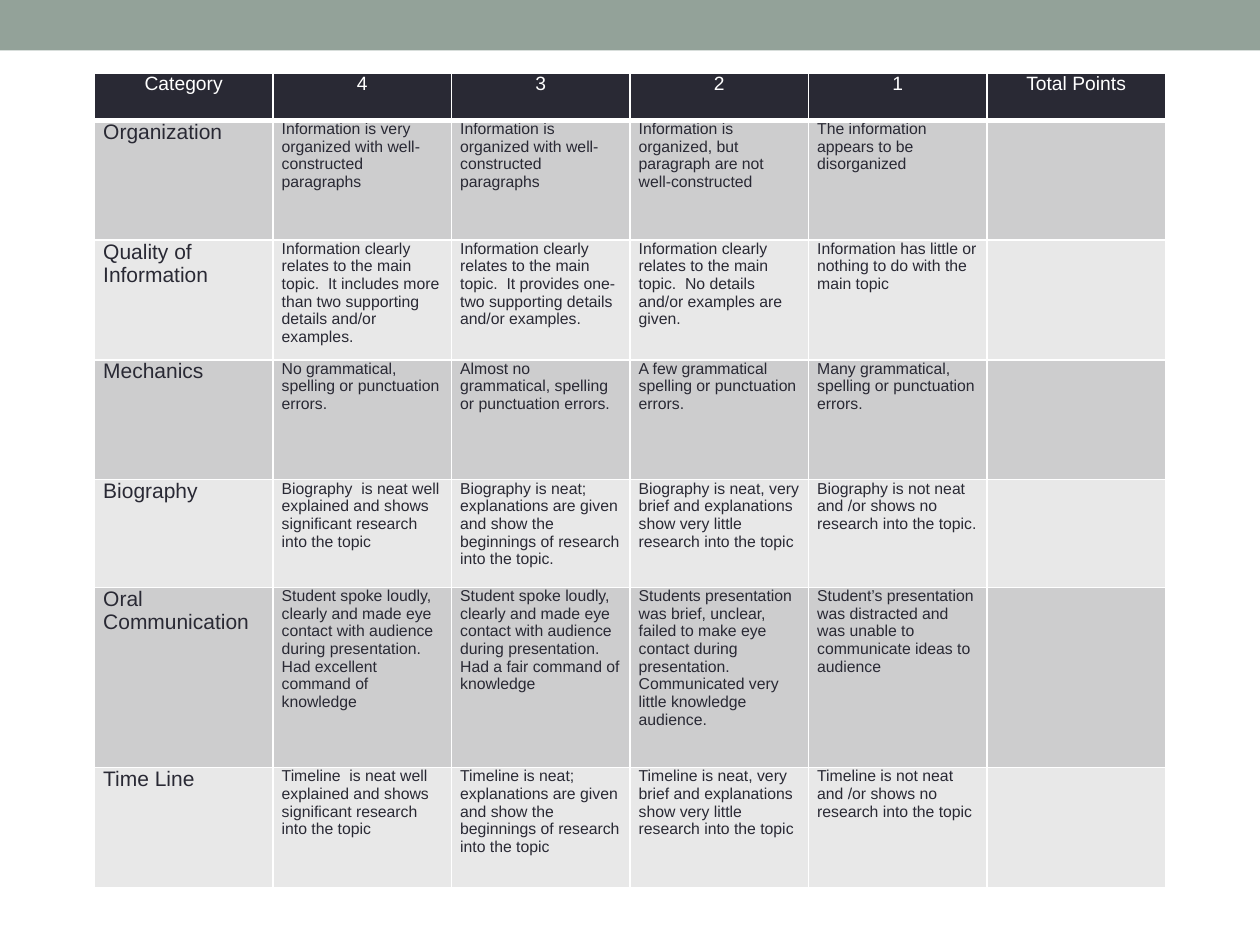
import pptx
import pptx.util
import pptx.dml.color
import pptx.enum.shapes
import pptx.enum.text
import lxml.etree

Pt = pptx.util.Pt
COLORS = {"band": "93A299", "dark": "292934", "white": "FFFFFF",
          "odd": "CDCDCE", "even": "E8E8E8"}
FORMATS = {
    "header": {"name": "Arial", "size": Pt(11), "bold": False},
    "category": {"name": "Arial", "size": Pt(12), "bold": False},
    "description": {"name": "Arial", "size": Pt(9), "bold": False},
}
ROW_HEIGHTS = [26.7, 68.5, 68.5, 68.5, 61.5, 103, 68.5]
RUBRIC = [
    ["Category", "4", "3", "2", "1", "Total Points"],
    ["Organization",
     "Information is very organized with well-constructed paragraphs",
     "Information is organized with well-constructed paragraphs",
     "Information is organized, but paragraph are not well-constructed",
     "The information appears to be disorganized", ""],
    ["Quality of Information",
     "Information clearly relates to the main topic.  It includes more than two supporting details and/or examples.",
     "Information clearly relates to the main topic.  It provides one-two supporting details and/or examples.",
     "Information clearly relates to the main topic.  No details and/or examples are given.",
     "Information has little or nothing to do with the main topic", ""],
    ["Mechanics",
     "No grammatical, spelling or punctuation errors.",
     "Almost no grammatical, spelling or punctuation errors.",
     "A few grammatical spelling or punctuation errors.",
     "Many grammatical, spelling or punctuation errors.", ""],
    ["Biography",
     "Biography  is neat well explained and shows significant research into the topic",
     "Biography is neat; explanations are given and show the beginnings of research into the topic.",
     "Biography is neat, very brief and explanations show very little research into the topic",
     "Biography is not neat and /or shows no research into the topic.", ""],
    ["Oral Communication",
     "Student spoke loudly, clearly and made eye contact with audience during presentation.  Had excellent command of knowledge",
     "Student spoke loudly, clearly and made eye contact with audience during presentation.  Had a fair command of knowledge",
     "Students presentation was brief, unclear, failed to make eye contact during presentation. Communicated very little knowledge audience.",
     "Student’s presentation was distracted and was unable to communicate ideas to audience", ""],
    ["Time Line",
     "Timeline  is neat well explained and shows significant research into the topic",
     "Timeline is neat; explanations are given and show the beginnings of research into the topic",
     "Timeline is neat, very brief and explanations show very little research into the topic",
     "Timeline is not neat and /or shows no research into the topic", ""],
]


def color(name):
    return pptx.dml.color.RGBColor.from_string(COLORS[name])


def set_borders(cell, bottom_width):
    """Draw white lines on all four sides; call before setting the fill."""
    properties = cell._tc.get_or_add_tcPr()
    namespace = "{http://schemas.openxmlformats.org/drawingml/2006/main}"
    for side, width in (("L", 1), ("R", 1), ("T", 1), ("B", bottom_width)):
        line = lxml.etree.SubElement(properties, f"{namespace}ln{side}", w=str(Pt(width)))
        fill = lxml.etree.SubElement(line, f"{namespace}solidFill")
        lxml.etree.SubElement(fill, f"{namespace}srgbClr", val=COLORS["white"])


def format_cell(cell, text, role, fill_name):
    is_header = role == "header"
    set_borders(cell, 3 if is_header else 1)
    cell.fill.solid()
    cell.fill.fore_color.rgb = color(fill_name)
    margins = {"margin_left": Pt(5), "margin_right": Pt(5),
               "margin_top": 0, "margin_bottom": 0}
    for attribute, value in margins.items():
        setattr(cell, attribute, value)
    cell.text = text
    paragraph = cell.text_frame.paragraphs[0]
    if is_header:
        paragraph.alignment = pptx.enum.text.PP_ALIGN.CENTER
    for font in [paragraph.font] + [run.font for run in paragraph.runs]:
        for attribute, value in FORMATS[role].items():
            setattr(font, attribute, value)
        font.color.rgb = color("white" if is_header else "dark")


def add_band(slide, left, top, width, height):
    band = slide.shapes.add_shape(pptx.enum.shapes.MSO_SHAPE.RECTANGLE,
                                  Pt(left), Pt(top), Pt(width), Pt(height))
    band.shadow.inherit = False
    band.fill.solid()
    band.fill.fore_color.rgb = color("band")
    band.line.fill.background()


def add_rubric(slide, left, top, width, height):
    column_count = len(RUBRIC[0])
    table = slide.shapes.add_table(len(RUBRIC), column_count, Pt(left), Pt(top),
                                   Pt(width), Pt(height)).table
    for column in table.columns:
        column.width = Pt(width / column_count)
    for row_index, texts in enumerate(RUBRIC):
        table.rows[row_index].height = Pt(ROW_HEIGHTS[row_index])
        for column_index, text in enumerate(texts):
            if row_index == 0:
                role, fill_name = "header", "dark"
            else:
                role = "description" if column_index else "category"
                fill_name = "odd" if row_index % 2 else "even"
            format_cell(table.cell(row_index, column_index), text, role, fill_name)


def main():
    presentation = pptx.Presentation()
    presentation.slide_width, presentation.slide_height = Pt(720), Pt(540)
    slide = presentation.slides.add_slide(presentation.slide_layouts[6])

    # Band across the top
    add_band(slide, 0, 0, 720, 28.8)
    # Scoring rubric
    add_rubric(slide, 54, 42, 612, sum(ROW_HEIGHTS))

    presentation.save("out.pptx")


if __name__ == "__main__":
    main()
